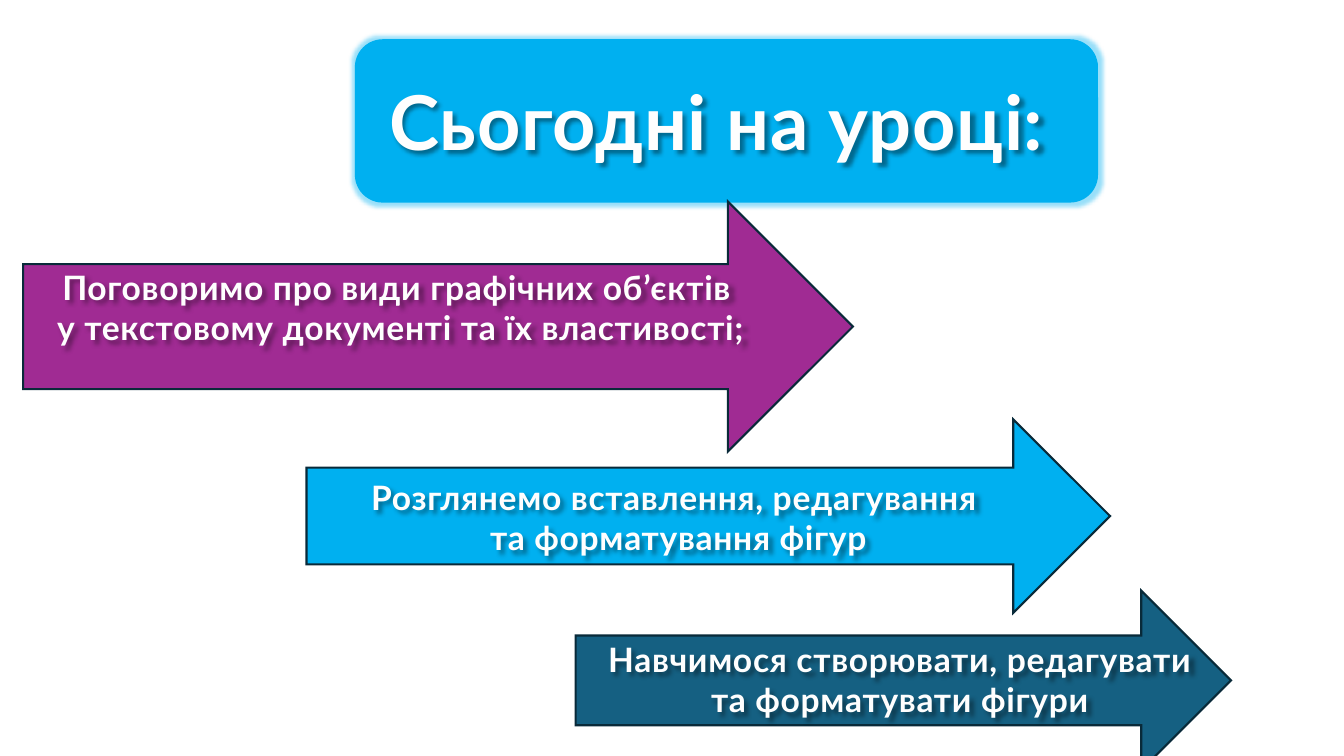
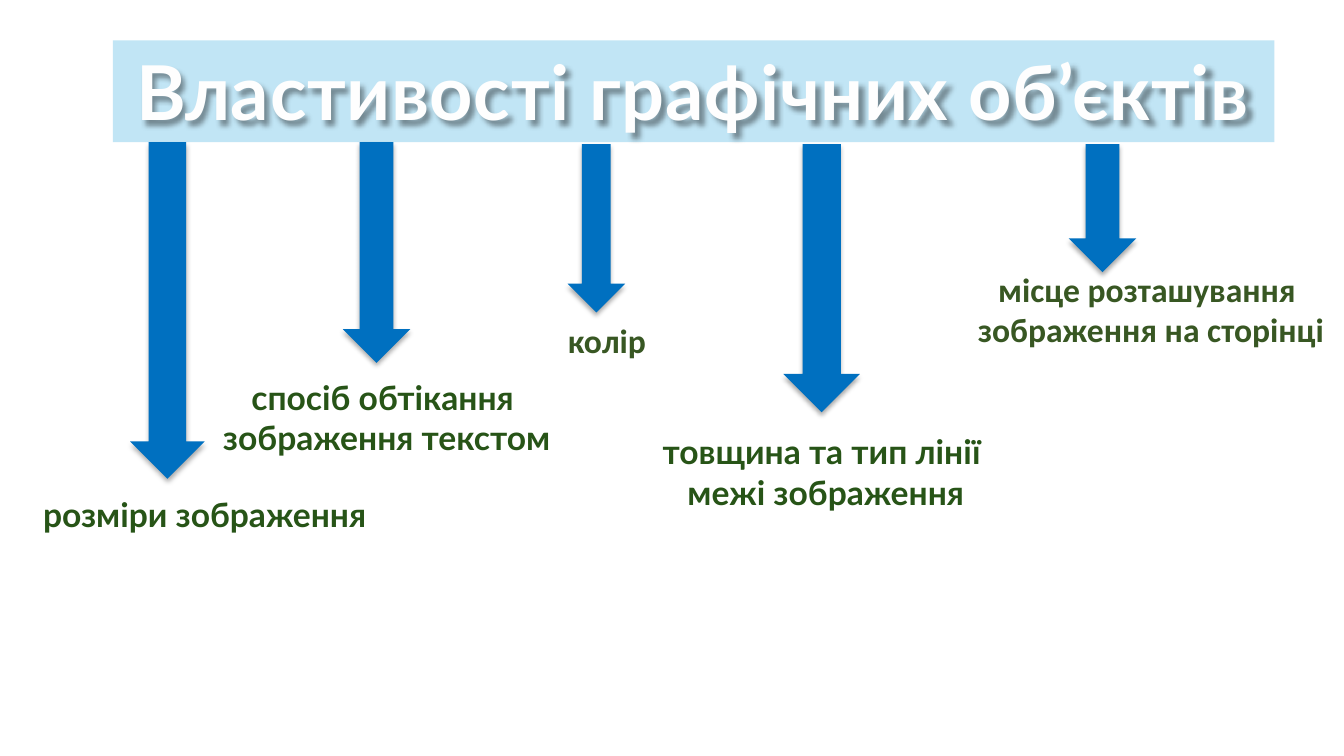
from dataclasses import dataclass

from lxml import etree
from pptx import Presentation
from pptx.dml.color import RGBColor
from pptx.enum.shapes import MSO_SHAPE
from pptx.enum.text import MSO_ANCHOR, MSO_AUTO_SIZE, PP_ALIGN
from pptx.oxml.ns import qn
from pptx.util import Emu, Pt

RECT = MSO_SHAPE.RECTANGLE
ROUND_RECT = MSO_SHAPE.ROUNDED_RECTANGLE
RIGHT_ARROW = MSO_SHAPE.RIGHT_ARROW
DOWN_ARROW = MSO_SHAPE.DOWN_ARROW
CENTER = PP_ALIGN.CENTER
TOP = MSO_ANCHOR.TOP
FIT = MSO_AUTO_SIZE.SHAPE_TO_FIT_TEXT

PX = 9144
POINT = 12700


@dataclass(frozen=True)
class Theme:
    """Colours, fonts and type sizes of the lesson."""
    white: str = "FEFEFE"
    sky: str = "00B0F0"
    pale: str = "C1E5F5"
    blue: str = "0070C0"
    teal: str = "156082"
    purple: str = "A02B93"
    edge: str = "092A39"
    green: str = "275417"
    olive: str = "385723"
    black: str = "000000"
    font: str = "Lato"
    alt_font: str = "Calibri"
    title: int = 54
    body: int = 24
    line: float = 1.5


T = Theme()


def px(*values):
    """Turn px lengths into EMU."""
    return [Emu(v * PX) for v in values]


def inside(box, offset):
    """Return a box placed relative to the corner of another."""
    return (box[0] + offset[0], box[1] + offset[1], *offset[2:])


def add_color(parent, color, alpha=100):
    """Append a colour with an opacity in percent."""
    clr = etree.SubElement(parent, qn("a:srgbClr"), val=color)
    if alpha < 100:
        etree.SubElement(clr, qn("a:alpha"), val=str(alpha * 1000))


def effect_list(sp):
    """Clear the inherited effects and return the empty list."""
    sp.shadow.inherit = False
    return sp._element.spPr.find(qn("a:effectLst"))


def add_shadow(sp, alpha, blur, dist, angle):
    """Give a shape a black shadow, sized in points."""
    shadow = etree.SubElement(
        effect_list(sp), qn("a:outerShdw"), blurRad=str(round(blur * POINT)),
        dist=str(round(dist * POINT)), dir=str(angle * 60000),
        algn="tl", rotWithShape="0")
    add_color(shadow, T.black, alpha)


def add_glow(sp, color, alpha, radius):
    """Give a shape a glow, sized in points."""
    glow = etree.SubElement(effect_list(sp), qn("a:glow"),
                            rad=str(radius * POINT))
    add_color(glow, color, alpha)


def outline_run(r):
    """Give a run its letter spacing and thin outline."""
    rPr = r._r.get_or_add_rPr()
    rPr.set("spc", "50")
    ln = etree.Element(qn("a:ln"), w=str(round(0.75 * POINT)))
    add_color(etree.SubElement(ln, qn("a:solidFill")), T.teal)
    rPr.insert(0, ln)


def add_text(s, box, lines, size=T.body, color=T.white, font=T.font, art=False):
    """Add a text box of centred bold lines."""
    sp = s.shapes.add_textbox(*px(*box))
    tf = sp.text_frame
    tf.word_wrap = False
    tf.auto_size = FIT
    tf.vertical_anchor = TOP
    for i, line in enumerate(lines):
        p = tf.paragraphs[0] if i == 0 else tf.add_paragraph()
        p.alignment = CENTER
        r = p.add_run()
        r.text = line
        r.font.size = Pt(size)
        r.font.bold = True
        r.font.name = font
        r.font.color.rgb = RGBColor.from_string(color)
        if art:
            outline_run(r)
    if art:
        add_shadow(sp, 40, 3, 3, 45)


def add_block(s, kind, box, fill, line=None):
    """Add a flat shape."""
    sp = s.shapes.add_shape(kind, *px(*box))
    sp.shadow.inherit = False
    sp.fill.solid()
    sp.fill.fore_color.rgb = RGBColor.from_string(fill)
    if line:
        sp.line.color.rgb = RGBColor.from_string(line)
        sp.line.width = Pt(T.line)
        etree.SubElement(sp._element.spPr.find(qn("a:ln")), qn("a:miter"),
                         lim="800000")
    else:
        sp.line.fill.background()
    return sp


def glowing_title(s, box, text):
    """Place a rounded title plate with a glow."""
    add_glow(add_block(s, ROUND_RECT, box, T.sky, T.sky), T.sky, 40, 6)
    add_text(s, inside(box, (14, 29, 688, 101)), [text], size=T.title, art=True)


def goal_arrow(s, box, fill, offset, lines):
    """Place a goal on an arrow pointing right."""
    add_block(s, RIGHT_ARROW, box, fill, T.edge)
    add_text(s, inside(box, offset), lines, art=True)


def banner(s, box, text):
    """Place a flat title band."""
    add_block(s, RECT, box, T.pale)
    add_text(s, box, [text], size=T.title, art=True)


def property_arrow(s, box, label, lines, **fmt):
    """Place an arrow pointing down and its label."""
    add_shadow(add_block(s, DOWN_ARROW, box, T.blue), 32, 3.5, 2.2, 90)
    add_text(s, inside(box, label), lines, **fmt)


def goals_slide(s):
    """Build the slide with the goals of the lesson."""
    glowing_title(s, (353, 40, 735, 160), "Сьогодні на уроці:")
    goals = [
        ((23, 200, 823, 248), T.purple, (20, 60, 710, 91),
         ["Поговоримо про види графічних об’єктів ",
          "у текстовому документі та їх властивості; "]),
        ((571, 586, 650, 178), T.teal, (13, 43, 617, 91),
         ["Навчимося створювати, редагувати", "та форматувати фігури"]),
        ((304, 416, 797, 192), T.sky, (44, 52, 650, 91),
         ["Розглянемо вставлення, редагування ", "та форматування фігур"]),
    ]
    for goal in goals:
        goal_arrow(s, *goal)


def properties_slide(s):
    """Build the slide with the properties of graphic objects."""
    banner(s, (112, 40, 1152, 101), "Властивості графічних об’єктів")
    main_fmt = {"color": T.green}
    alt_fmt = {"color": T.olive, "font": T.alt_font}
    properties = [
        ((129, 141, 74, 334), (-103, 344, 354, 50),
         ["розміри зображення"], main_fmt),
        ((340, 141, 67, 219), (-133, 228, 353, 91),
         ["спосіб обтікання ", "зображення текстом"], main_fmt),
        ((563, 143, 57, 167), (-10, 169, 98, 50), ["колір"], alt_fmt),
        ((777, 143, 76, 266), (-130, 280, 336, 91),
         ["товщина та тип лінії", " межі зображення"], main_fmt),
        ((1060, 143, 67, 127), (-102, 119, 367, 91),
         ["місце розташування ", "зображення на сторінці"], alt_fmt),
    ]
    for box, label, lines, fmt in properties:
        property_arrow(s, box, label, lines, **fmt)


def main():
    """Build and save the presentation."""
    prs = Presentation()
    prs.slide_width, prs.slide_height = px(1333, 750)
    for build in (goals_slide, properties_slide):
        build(prs.slides.add_slide(prs.slide_layouts[6]))
    prs.save("out.pptx")


if __name__ == "__main__":
    main()
